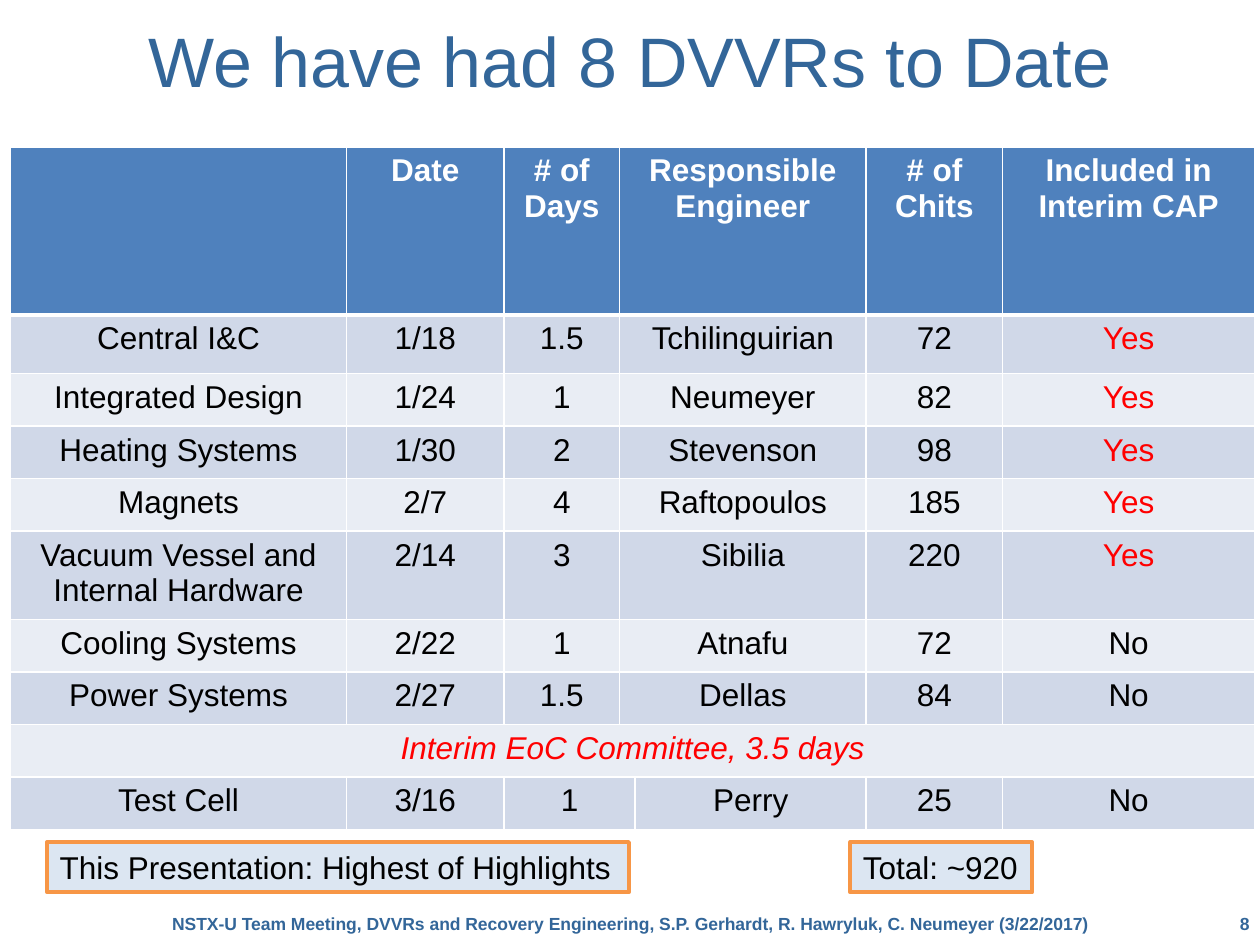
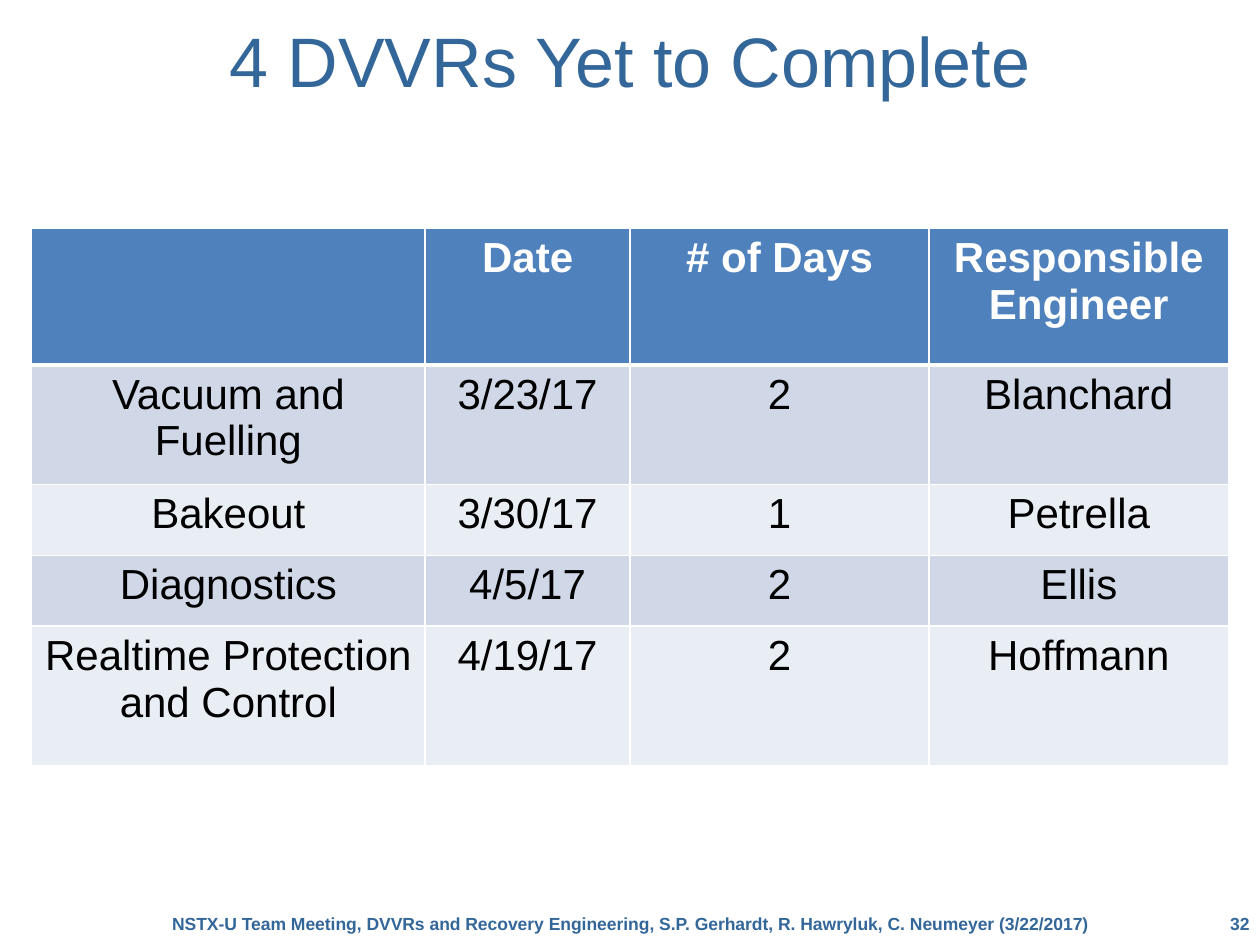
from lxml.etree import SubElement
from pptx import Presentation
from pptx.dml.color import RGBColor
from pptx.enum.shapes import MSO_SHAPE
from pptx.enum.text import MSO_ANCHOR, MSO_AUTO_SIZE, PP_ALIGN
from pptx.oxml.ns import qn
from pptx.util import Inches, Pt

COLORS = {
    "heading": "336699", "header": "4F81BD", "band_dark": "D0D8E8",
    "band_light": "E9EDF4", "box": "DCE6F2", "box_line": "F79646",
    "white": "FFFFFF", "black": "000000", "accent": "FF0000",
}
FONT = "Arial"
COLUMNS, ROWS = 120, 90
FOOTER = ("NSTX-U Team Meeting, DVVRs and Recovery Engineering, "
          "S.P. Gerhardt, R. Hawryluk, C. Neumeyer (3/22/2017)")
COMMITTEE = "Interim EoC Committee, 3.5 days"


def color(name):
    return RGBColor.from_string(COLORS[name])


class Deck:
    """Places elements on the current slide, measured in grid columns and rows."""

    def __init__(self):
        self.presentation = Presentation()
        self.presentation.slide_width = Inches(10)
        self.presentation.slide_height = Inches(7.5)
        self.column = self.presentation.slide_width / COLUMNS
        self.row = self.presentation.slide_height / ROWS
        self.slide = None

    def place(self, left, top, width, height):
        return (round(left * self.column), round(top * self.row),
                round(width * self.column), round(height * self.row))

    def add_slide(self, title, number):
        self.slide = self.presentation.slides.add_slide(self.presentation.slide_layouts[6])
        self.text(str(number), (111, 86.4, 8, 3.2), 10, PP_ALIGN.RIGHT, bold=True)
        self.text(FOOTER, (12, 86.4, 96, 3.2), 10, PP_ALIGN.CENTER, bold=True)
        self.title(title)

    def add_text_run(self, frame, text, size, color_name, align, bold=False, italic=False):
        paragraph = frame.paragraphs[0]
        paragraph.alignment = align
        run = paragraph.add_run()
        run.text = text
        run.font.name, run.font.size = FONT, Pt(size)
        run.font.bold, run.font.italic = bold, italic
        run.font.color.rgb = color(color_name)
        return paragraph

    def text(self, text, area, size, align, bold=False):
        frame = self.slide.shapes.add_textbox(*self.place(*area)).text_frame
        frame.word_wrap = True
        frame.auto_size = MSO_AUTO_SIZE.SHAPE_TO_FIT_TEXT
        frame.margin_left = frame.margin_right = 0
        self.add_text_run(frame, text, size, "heading", align, bold)

    def title(self, text):
        frame = self.slide.shapes.add_textbox(*self.place(0, 0, COLUMNS, 12.6)).text_frame
        frame.word_wrap = True
        frame.vertical_anchor = MSO_ANCHOR.MIDDLE
        frame.margin_left = frame.margin_right = Inches(0.05)
        paragraph = self.add_text_run(frame, text, 40, "heading", PP_ALIGN.CENTER)
        paragraph.line_spacing = 0.85

    def callout(self, text, area):
        shape = self.slide.shapes.add_shape(MSO_SHAPE.RECTANGLE, *self.place(*area))
        shape.shadow.inherit = False
        shape.fill.solid()
        shape.fill.fore_color.rgb = color("box")
        shape.line.color.rgb = color("box_line")
        shape.line.width = Pt(2.25)
        frame = shape.text_frame
        frame.word_wrap = False
        frame.auto_size = MSO_AUTO_SIZE.SHAPE_TO_FIT_TEXT
        frame.vertical_anchor = MSO_ANCHOR.TOP
        self.add_text_run(frame, text, 18, "black", PP_ALIGN.LEFT)

    def style_cell(self, cell, row_index):
        """Draw white borders, thick below the header, and the band fill."""
        properties = cell._tc.get_or_add_tcPr()
        thick = {0: "lnB", 1: "lnT"}.get(row_index)
        for side in ("lnL", "lnR", "lnT", "lnB"):
            width = Pt(3 if side == thick else 1)
            line = SubElement(properties, qn("a:" + side), w=str(width))
            fill = SubElement(line, qn("a:solidFill"))
            SubElement(fill, qn("a:srgbClr"), val=COLORS["white"])
        band = "band_dark" if row_index % 2 else "band_light"
        cell.fill.solid()
        cell.fill.fore_color.rgb = color(band if row_index else "header")

    def table(self, left, top, widths, heights, rows, size, spans_of):
        """Fill a table; spans_of(row_index) tells how many columns each text takes."""
        area = self.place(left, top, sum(widths), sum(heights))
        table = self.slide.shapes.add_table(len(heights), len(widths), *area).table
        for column, width in zip(table.columns, widths):
            column.width = round(width * self.column)
        for row, height in zip(table.rows, heights):
            row.height = round(height * self.row)
        for row_index, texts in enumerate(rows):
            for column_index in range(len(widths)):
                self.style_cell(table.cell(row_index, column_index), row_index)
            start = 0
            for text, span in zip(texts, spans_of(row_index)):
                cell = table.cell(row_index, start)
                if span > 1:
                    cell.merge(table.cell(row_index, start + span - 1))
                if text:
                    ink = "accent" if text in ("Yes", COMMITTEE) else "black"
                    self.add_text_run(cell.text_frame, text, size,
                                      ink if row_index else "white", PP_ALIGN.CENTER,
                                      row_index == 0, text == COMMITTEE)
                start += span


def completed_spans(row_index):
    return {8: (7,), 9: (1, 1, 2, 1, 1, 1)}.get(row_index, (1, 1, 1, 2, 1, 1))


def main():
    deck = Deck()

    deck.add_slide("We have had 8 DVVRs to Date", 8)
    completed = [
        ("", "Date", "# of Days", "Responsible Engineer", "# of Chits",
         "Included in Interim CAP"),
        ("Central I&C", "1/18", "1.5", "Tchilinguirian", "72", "Yes"),
        ("Integrated Design", "1/24", "1", "Neumeyer", "82", "Yes"),
        ("Heating Systems", "1/30", "2", "Stevenson", "98", "Yes"),
        ("Magnets", "2/7", "4", "Raftopoulos", "185", "Yes"),
        ("Vacuum Vessel and Internal Hardware", "2/14", "3", "Sibilia", "220", "Yes"),
        ("Cooling Systems", "2/22", "1", "Atnafu", "72", "No"),
        ("Power Systems", "2/27", "1.5", "Dellas", "84", "No"),
        (COMMITTEE,),
        ("Test Cell", "3/16", "1", "Perry", "25", "No"),
    ]
    deck.table(1, 14, (32, 15, 11, 1.5, 22, 13, 24), (16, 5.6) + (5,) * 8,
               completed, 18, completed_spans)
    deck.callout("This Presentation: Highest of Highlights", (4.5, 80.2, 55.4, 4.8))
    deck.callout("Total: ~920", (81, 80.2, 17.3, 4.8))

    deck.add_slide("4 DVVRs Yet to Complete", 32)
    remaining = [
        ("", "Date", "# of Days", "Responsible Engineer"),
        ("Vacuum and Fuelling", "3/23/17", "2", "Blanchard"),
        ("Bakeout", "3/30/17", "1", "Petrella"),
        ("Diagnostics", "4/5/17", "2", "Ellis"),
        ("Realtime Protection and Control", "4/19/17", "2", "Hoffmann"),
    ]
    deck.table(3, 21.75, (37.5, 19.5, 28.5, 28.5), (13, 11.4, 6.75, 6.75, 13.3),
               remaining, 24, lambda row_index: (1,) * 4)

    deck.presentation.save("out.pptx")


if __name__ == "__main__":
    main()
